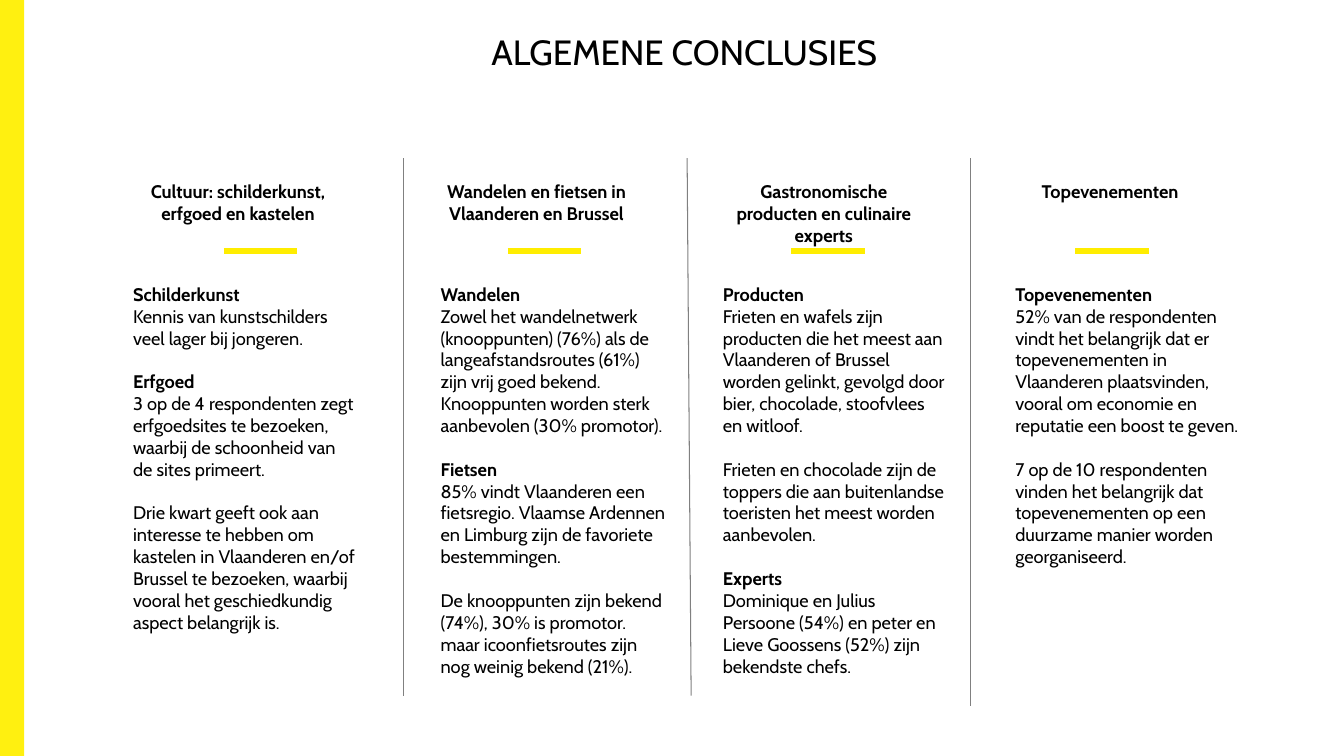
from dataclasses import dataclass

from lxml.etree import SubElement
from pptx import Presentation
from pptx.dml.color import RGBColor
from pptx.enum.shapes import MSO_CONNECTOR, MSO_SHAPE
from pptx.enum.text import MSO_ANCHOR, PP_ALIGN
from pptx.oxml.ns import qn
from pptx.slide import Slide
from pptx.text.text import TextFrame
from pptx.util import Inches, Pt

COLORS = {"band": "FFF010", "accent": "FFED00", "divider": "808080", "text": "000000"}
CELL = Inches(0.1)
COLUMNS, ROWS = 133.3, 75
PITCH = 28.15
FIRST_ACCENT, ACCENT_WIDTH, ACCENT_ROW = 22.2, 7.3, 24.9
FIRST_DIVIDER, DIVIDER_TOP = 40, 15.7
HEADING_TOP, HEADING_HEIGHT = 17.4, 7.9
BODY_TOP, BODY_HEIGHT = 27.6, 35.9
BAND_WIDTH = 2.4
BLOCK_GAP = Pt(15.6)


@dataclass(frozen=True)
class Area:
    left: float
    top: float
    width: float
    height: float


@dataclass(frozen=True)
class Block:
    title: str
    lines: tuple[str, ...]


@dataclass(frozen=True)
class Topic:
    heading: str
    heading_left: float
    heading_width: float
    body_left: float
    body_width: float
    blocks: tuple[Block, ...]


@dataclass(frozen=True)
class Divider:
    lean: float
    bottom: float


DIVIDERS = (Divider(0, 69), Divider(0.4, 69), Divider(0, 70))

TOPICS = (
    Topic("Cultuur: schilderkunst, erfgoed en kastelen", 11.3, 24.6, 10.8, 27.1, (
        Block("Schilderkunst", ("Kennis van kunstschilders veel lager bij jongeren.",)),
        Block("Erfgoed", (
            "3 op de 4 respondenten zegt erfgoedsites te bezoeken, waarbij de "
            "schoonheid van de sites primeert.",)),
        Block("", (
            "Drie kwart geeft ook aan interesse te hebben om kastelen in Vlaanderen "
            "en/of Brussel te bezoeken, waarbij vooral het geschiedkundig aspect "
            "belangrijk is.",)),
    )),
    Topic("Wandelen en fietsen in Vlaanderen en Brussel", 40.9, 24.6, 41.3, 27.1, (
        Block("Wandelen", (
            "Zowel het wandelnetwerk (knooppunten) (76%) als de langeafstandsroutes "
            "(61%) zijn vrij goed bekend.",
            "Knooppunten worden sterk aanbevolen (30% promotor).")),
        Block("Fietsen", (
            "85% vindt Vlaanderen een fietsregio. Vlaamse Ardennen en Limburg zijn "
            "de favoriete bestemmingen.",)),
        Block("", (
            "De knooppunten zijn bekend (74%), 30% is promotor. maar "
            "icoonfietsroutes zijn nog weinig bekend (21%).",)),
    )),
    Topic("Gastronomische producten en culinaire experts", 69, 25.4, 69.3, 27.1, (
        Block("Producten", (
            "Frieten en wafels zijn producten die het meest aan Vlaanderen of "
            "Brussel worden gelinkt, gevolgd door bier, chocolade, stoofvlees en "
            "witloof.",)),
        Block("", (
            "Frieten en chocolade zijn de toppers die aan buitenlandse toeristen "
            "het meest worden aanbevolen.",)),
        Block("Experts", (
            "Dominique en Julius Persoone (54%) en peter en Lieve Goossens (52%) "
            "zijn bekendste chefs.",)),
    )),
    Topic("Topevenementen", 97.4, 25.4, 98.3, 27.8, (
        Block("Topevenementen", (
            "52% van de respondenten vindt het belangrijk dat er topevenementen in "
            "Vlaanderen plaatsvinden, vooral om economie en reputatie een boost te "
            "geven.",)),
        Block("", (
            "7 op de 10 respondenten vinden het belangrijk dat topevenementen op "
            "een duurzame manier worden georganiseerd.",)),
    )),
)


def cells(count: float) -> int:
    return round(count * CELL)


def add_box(page: Slide, area: Area, side_inset: float, edge_inset: float) -> TextFrame:
    box = page.shapes.add_textbox(
        cells(area.left), cells(area.top), cells(area.width), cells(area.height))
    frame = box.text_frame
    values = {
        "word_wrap": True,
        "vertical_anchor": MSO_ANCHOR.TOP,
        "margin_left": cells(side_inset),
        "margin_right": cells(side_inset),
        "margin_top": cells(edge_inset),
        "margin_bottom": cells(edge_inset),
    }
    for name, value in values.items():
        setattr(frame, name, value)
    return frame


def add_para(frame: TextFrame, text: str, size: float, bold: bool,
             align: PP_ALIGN = PP_ALIGN.LEFT, gap: int = 0) -> None:
    first = not frame.paragraphs[0].runs
    para = frame.paragraphs[0] if first else frame.add_paragraph()
    para.alignment = align
    if gap:
        para.space_before = gap
    span = para.add_run()
    span.text = text
    for name, value in {"name": "Cabin", "size": Pt(size), "bold": bold}.items():
        setattr(span.font, name, value)
    span.font.color.rgb = RGBColor.from_string(COLORS["text"])


def add_line(page: Slide, start: tuple[float, float], end: tuple[float, float],
             color: str, width: float) -> None:
    line = page.shapes.add_connector(
        MSO_CONNECTOR.STRAIGHT, *(cells(value) for value in start + end))
    line.line.color.rgb = RGBColor.from_string(COLORS[color])
    line.line.width = Pt(width)
    SubElement(line._element.spPr, qn("a:effectLst"))


def add_band(page: Slide) -> None:
    band = page.shapes.add_shape(
        MSO_SHAPE.RECTANGLE, 0, 0, cells(BAND_WIDTH), cells(ROWS))
    band.shadow.inherit = False
    band.fill.solid()
    band.fill.fore_color.rgb = RGBColor.from_string(COLORS["band"])
    band.line.fill.background()


def add_topic(page: Slide, topic: Topic) -> None:
    heading = add_box(page, Area(
        topic.heading_left, HEADING_TOP, topic.heading_width, HEADING_HEIGHT), 2.4, 0.5)
    add_para(heading, topic.heading, 13, True, PP_ALIGN.CENTER)
    body = add_box(page, Area(
        topic.body_left, BODY_TOP, topic.body_width, BODY_HEIGHT), 2.4, 0.5)
    for position, block in enumerate(topic.blocks):
        gap = BLOCK_GAP if position else 0
        if block.title:
            add_para(body, block.title, 13, True, gap=gap)
            gap = 0
        for text in block.lines:
            add_para(body, text, 13, False, gap=gap)
            gap = 0


def main() -> None:
    deck = Presentation()
    deck.slide_width, deck.slide_height = cells(COLUMNS), cells(ROWS)
    page = deck.slides.add_slide(deck.slide_layouts[6])
    add_band(page)
    title = add_box(page, Area(BAND_WIDTH, 3, COLUMNS - BAND_WIDTH, 12.5), 0, 0)
    add_para(title, "ALGEMENE CONCLUSIES", 25, False, PP_ALIGN.CENTER)
    for position, divider in enumerate(DIVIDERS):
        column = FIRST_DIVIDER + position * PITCH
        add_line(page, (column, DIVIDER_TOP), (column + divider.lean, divider.bottom),
                 "divider", 0.75)
    for position, topic in enumerate(TOPICS):
        column = FIRST_ACCENT + position * PITCH
        add_line(page, (column, ACCENT_ROW), (column + ACCENT_WIDTH, ACCENT_ROW),
                 "accent", 4.5)
        add_topic(page, topic)
    deck.save("out.pptx")


if __name__ == "__main__":
    main()
